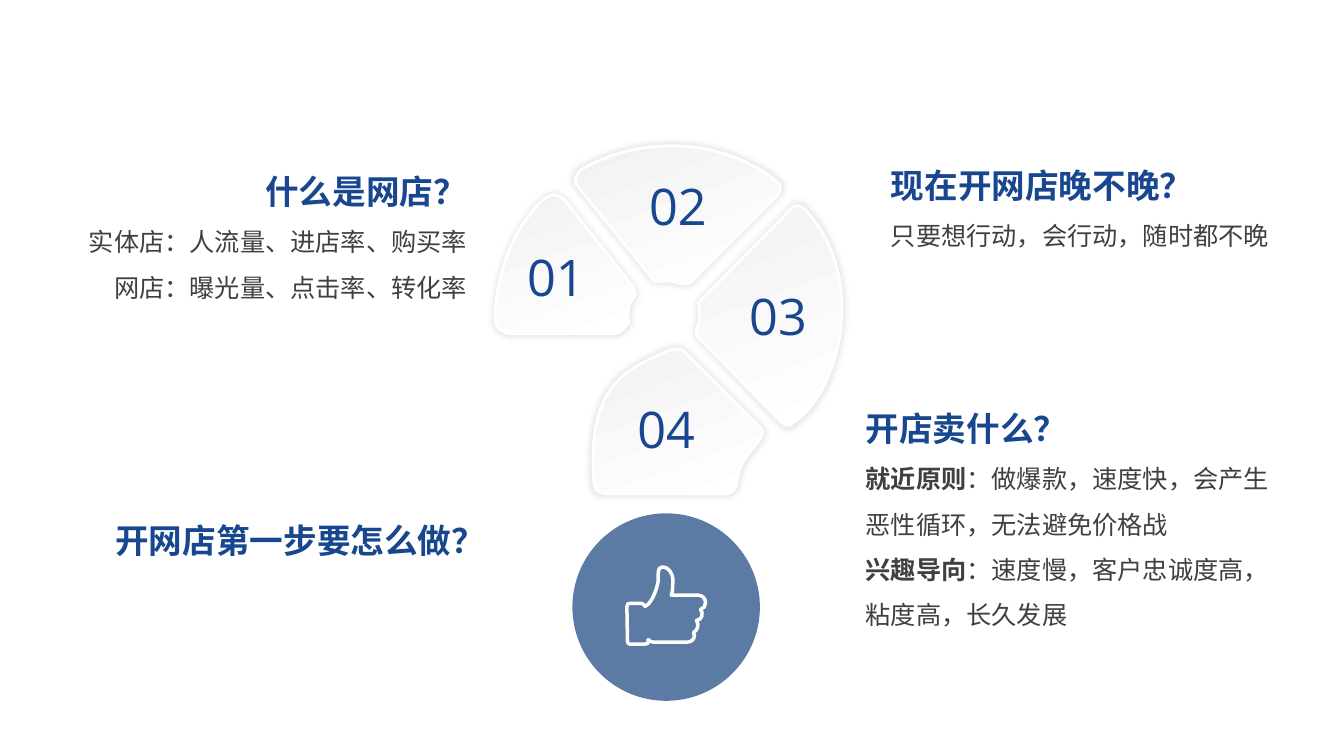
from lxml import etree
from pptx import Presentation
from pptx.dml.color import RGBColor
from pptx.enum.shapes import MSO_SHAPE
from pptx.enum.text import MSO_AUTO_SIZE, PP_ALIGN
from pptx.oxml.ns import qn
from pptx.util import Pt

OVAL = MSO_SHAPE.OVAL
GROW = MSO_AUTO_SIZE.SHAPE_TO_FIT_TEXT
LEFT, CENTER, RIGHT = PP_ALIGN.LEFT, PP_ALIGN.CENTER, PP_ALIGN.RIGHT

NAVY, GREY, STEEL, WHITE, PALE = "18478F", "404040", "5B7BA4", "FFFFFF", "F2F2F2"
CJK, LATIN = "Noto Sans CJK SC", "Open Sans"

PETALS = [
    ("01", (353.5, 139, 100.1, 99.4), (362.2, 172.1), [
        (98.6, 65.5), (49.7, 3.6),
        (43.9, -1.4, 38.9, -0.7, 33.1, 5), (14.4, 22.3, 1.4, 54, 0, 87.1),
        (0, 96.5, 5, 97.9, 10.1, 99.4), (85.7, 99.4),
        (90.7, 98.6, 93.6, 94.3, 95.8, 90.7), (94.3, 85, 95, 79.2, 98.6, 74.2),
        (102.2, 70.6, 98.6, 68.4, 98.6, 65.5)]),
    ("02", (411.1, 104.4, 146.2, 98.6), (449.3, 121.3), [
        (56.2, 96.5), (2.2, 29.5),
        (-2.9, 24.5, 1.4, 19.4, 4.3, 16.6), (45.4, -7.2, 103, -7.2, 144, 25.2),
        (147.6, 28.8, 146.9, 33.1, 143.3, 36), (84.2, 95.8),
        (79.9, 100.8, 77, 97.2, 73.4, 97.9), (67.7, 95, 61.9, 97.2, 56.2, 96.5)]),
    ("03", (497.5, 146.9, 104.4, 157), (520.9, 200.2), [
        (67.7, 2.2), (1.4, 69.1),
        (5, 85, -3.6, 89.3, 1.4, 94.3), (61.2, 155.5),
        (64.8, 158.4, 67.7, 157, 71.3, 153.4), (102.2, 132.5, 123.1, 49.7, 77, 2.2),
        (74.2, 0.7, 71.3, -2.2, 67.7, 2.2)]),
    ("04", (423.4, 249.1, 121, 103.7), (440.9, 280.8), [
        (64.8, 1.4), (119.5, 56.2),
        (127.4, 64.1, 105.1, 73.4, 103, 95), (103, 98.6, 100.8, 103, 95.8, 103.7),
        (10.1, 103.7), (2.2, 103, 0.7, 99.4, 0.7, 93.6),
        (-3.6, 26.6, 22.3, 15.8, 51.8, 2.2), (56.2, 0, 61.2, -0.7, 64.8, 1.4)]),
]

THUMB = [
    (3.6, 27), (11.5, 27), (13, 27, 14, 28, 14.4, 29.2),
    (20.2, 26.6, 23.8, 13, 23.8, 10.1), (23.8, 6.5, 23, 1.1, 26.6, 1.1),
    (31.7, 1.1, 33.8, 5.8, 34.2, 9.4), (34.2, 17.3, 33.8, 19.4, 33.1, 21.2),
    (52.6, 21.2), (55.4, 21.2, 57.6, 23.8, 57.6, 26.6),
    (57.6, 28.8, 56.2, 31, 54, 31.3), (56.2, 33.8, 55.4, 38.9, 51.1, 39.2),
    (53.3, 42.5, 51.8, 46.1, 49, 47.9), (51.1, 51.1, 48.2, 54.7, 44.6, 54.7),
    (20.2, 54.7), (18.7, 54.7, 18, 54, 16.6, 52.9),
    (16.9, 56.2, 15.8, 56.2, 13.7, 56.2), (5, 56.2),
    (2.2, 56.2, 1.8, 55.4, 1.8, 54), (1.4, 29.5), (1.4, 27.4, 2.2, 27, 3.6, 27),
]

TOPICS = [
    ((629.3, 85.7, 310.3, 97.9), LEFT, 2, "现在开网店晚不晚？",
     [[("只要想行动，会行动，随时都不晚", False)]]),
    ((36.7, 104.2, 303.8, 115.9), RIGHT, 1.5, "什么是网店？",
     [[("实体店：人流量、进店率、购买率", False)],
      [("网店：曝光量、点击率、转化率", False)]]),
    ((611.3, 273.6, 302.4, 181.4), LEFT, 1.5, "开店卖什么？",
     [[("就近原则", True), ("：做爆款，速度快，会产生恶性循环，无法避免价格战", False)],
      [("兴趣导向", True), ("：速度慢，客户忠诚度高，粘度高，长久发展", False)]]),
    ((65.5, 367.6, 288, 36), RIGHT, 1, "开网店第一步要怎么做？", []),
]


def rgb(value):
    return RGBColor.from_string(value)


def add_outline(s, left, top, width, height, path, line_width):
    ends = [(Pt(step[-2]), Pt(step[-1])) for step in path]
    builder = s.shapes.build_freeform(*ends[0])
    builder.add_line_segments(ends[1:], close=True)
    sp = builder.convert_to_shape()
    sp.left, sp.top, sp.width, sp.height = Pt(left), Pt(top), Pt(width), Pt(height)
    curve_into_box(sp, path)
    sp.shadow.inherit = False
    sp.line.color.rgb = rgb(WHITE)
    sp.line.width = Pt(line_width)
    return sp


def curve_into_box(sp, path):
    outline = next(sp._element.spPr.iter(qn("a:path")))
    for child in list(outline):
        outline.remove(child)
    outline.set("w", str(sp.width))
    outline.set("h", str(sp.height))
    for i, step in enumerate(path):
        tag = "a:moveTo" if i == 0 else "a:lnTo" if len(step) == 2 else "a:cubicBezTo"
        segment = etree.SubElement(outline, qn(tag))
        for x, y in zip(step[::2], step[1::2]):
            etree.SubElement(segment, qn("a:pt"), x=str(Pt(x)), y=str(Pt(y)))
    etree.SubElement(outline, qn("a:close"))


def add_glow(sp):
    effects = sp._element.spPr.find(qn("a:effectLst"))
    shadow = etree.SubElement(effects, qn("a:outerShdw"), blurRad=str(Pt(5)),
                              dist="0", dir="0", sx="102000", sy="102000",
                              algn="ctr", rotWithShape="0")
    color = etree.SubElement(shadow, qn("a:srgbClr"), val="000000")
    etree.SubElement(color, qn("a:alpha"), val="11000")


def add_text_box(s, left, top, width, height):
    tf = s.shapes.add_textbox(Pt(left), Pt(top), Pt(width), Pt(height)).text_frame
    tf.word_wrap = True
    tf.auto_size = GROW
    return tf


def add_run(p, text, size, color, font, bold=False):
    r = p.add_run()
    r.text = text
    r.font.size = Pt(size)
    r.font.bold = bold
    r.font.name = font
    r.font.color.rgb = rgb(color)
    etree.SubElement(r.font._element, qn("a:ea"), typeface=font)


def add_petal(s, box, path):
    sp = add_outline(s, *box, path, 2)
    sp.fill.gradient()
    sp.fill.gradient_angle = 110
    for stop, color in zip(sp.fill.gradient_stops, (WHITE, PALE)):
        stop.color.rgb = rgb(color)
    add_glow(sp)


def add_number(s, left, top, number):
    p = add_text_box(s, left, top, 69.8, 51.1).paragraphs[0]
    p.alignment = CENTER
    add_run(p, number, 36, NAVY, LATIN)


def add_badge(s, left, top, size):
    sp = s.shapes.add_shape(OVAL, Pt(left), Pt(top), Pt(size), Pt(size))
    sp.shadow.inherit = False
    sp.fill.solid()
    sp.fill.fore_color.rgb = rgb(STEEL)
    sp.line.fill.background()
    thumb = add_outline(s, left + 37.5, top + 37.3, 59, 57.6, THUMB, 2.5)
    thumb.fill.background()


def add_topic(s, box, align, heading_spacing, heading, lines):
    tf = add_text_box(s, *box)
    p = tf.paragraphs[0]
    p.alignment = align
    p.line_spacing = float(heading_spacing)
    add_run(p, heading, 24, NAVY, CJK, True)
    for line in lines:
        p = tf.add_paragraph()
        p.alignment = align
        p.line_spacing = 1.5
        for text, bold in line:
            add_run(p, text, 18, GREY, CJK, bold)


def main():
    prs = Presentation()
    prs.slide_width, prs.slide_height = Pt(960), Pt(540)
    s = prs.slides.add_slide(prs.slide_layouts[6])
    for _, box, _, path in PETALS:
        add_petal(s, box, path)
    add_badge(s, 408.9, 366.7, 133.9)
    for number, _, number_at, _ in PETALS:
        add_number(s, *number_at, number)
    for topic in TOPICS:
        add_topic(s, *topic)
    prs.save("out.pptx")


if __name__ == "__main__":
    main()
